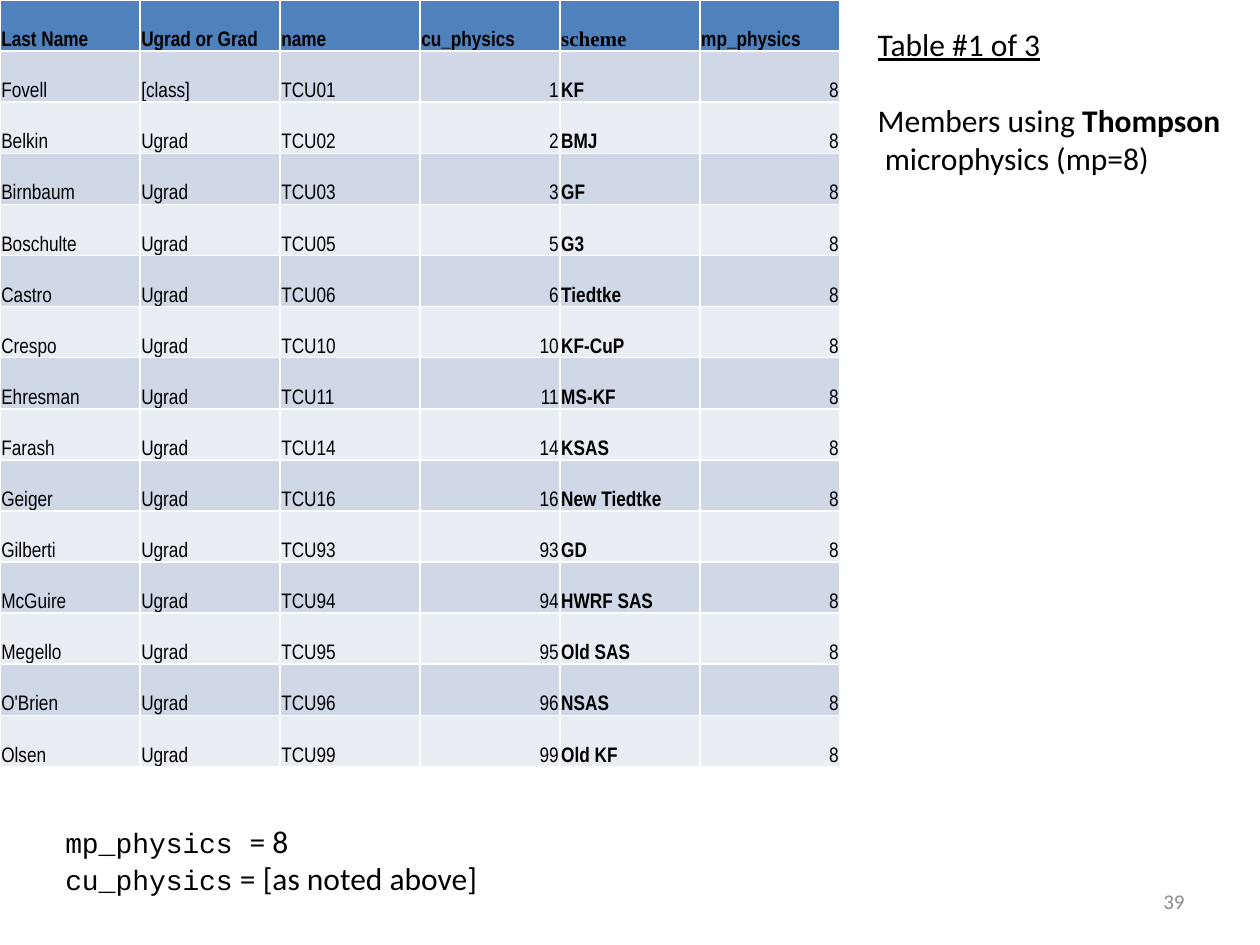
import pptx
import pptx.util
import pptx.dml.color
import pptx.enum.text

Pt = pptx.util.Pt
Align = pptx.enum.text.PP_ALIGN
Anchor = pptx.enum.text.MSO_ANCHOR
Fit = pptx.enum.text.MSO_AUTO_SIZE

hues = {"head": "4F81BD", "odd": "D0D8E8", "even": "E9EDF4",
        "ink": "000000", "page": "8C8C8C"}
heads = ["Last Name", "Ugrad or Grad", "name", "cu_physics", "scheme", "mp_physics"]
members = [
    ("Fovell", 1, "KF"), ("Belkin", 2, "BMJ"), ("Birnbaum", 3, "GF"),
    ("Boschulte", 5, "G3"), ("Castro", 6, "Tiedtke"), ("Crespo", 10, "KF-CuP"),
    ("Ehresman", 11, "MS-KF"), ("Farash", 14, "KSAS"), ("Geiger", 16, "New Tiedtke"),
    ("Gilberti", 93, "GD"), ("McGuire", 94, "HWRF SAS"), ("Megello", 95, "Old SAS"),
    ("O'Brien", 96, "NSAS"), ("Olsen", 99, "Old KF"),
]
rows = [heads]
for name, code, scheme in members:
    level = "[class]" if name == "Fovell" else "Ugrad"
    rows.append([name, level, f"TCU{code:02}", str(code), scheme, "8"])


def style(font, face, size, hue="ink"):
    font.name = face
    font.size = Pt(size)
    font.color.rgb = pptx.dml.color.RGBColor.from_string(hues[hue])


def add_text(left, top, width, height, lines):
    box = slide.shapes.add_textbox(Pt(left), Pt(top), Pt(width), Pt(height))
    frame = box.text_frame
    frame.word_wrap = False
    frame.auto_size = Fit.SHAPE_TO_FIT_TEXT
    for i, line in enumerate(lines):
        para = frame.paragraphs[0] if i == 0 else frame.add_paragraph()
        style(para.font, "Calibri", 18)
        for text in line:
            para.add_run().text = text
    return frame


deck = pptx.Presentation()
deck.slide_width = Pt(720)
deck.slide_height = Pt(540)
slide = deck.slides.add_slide(deck.slide_layouts[6])

page = add_text(516, 500.5, 168, 28.75, [["39"]])
page.word_wrap = True
page.auto_size = Fit.NONE
page.vertical_anchor = Anchor.MIDDLE
page.paragraphs[0].alignment = Align.RIGHT
style(page.paragraphs[0].font, "Calibri", 12, "page")

table = slide.shapes.add_table(
    len(rows), len(heads), Pt(0), Pt(0), Pt(480), Pt(438)).table
for col in table.columns:
    col.width = Pt(80)
for r, row in enumerate(rows):
    table.rows[r].height = Pt(29.2)
    band = "head" if r == 0 else "odd" if r % 2 else "even"
    for c, text in enumerate(row):
        cell = table.cell(r, c)
        cell.text = text
        cell.fill.solid()
        cell.fill.fore_color.rgb = pptx.dml.color.RGBColor.from_string(hues[band])
        cell.vertical_anchor = Anchor.BOTTOM
        cell.margin_left = cell.margin_right = cell.margin_top = Pt(0.75)
        cell.margin_bottom = Pt(0)
        para = cell.text_frame.paragraphs[0]
        face = "Times New Roman" if text == "scheme" else "Arial Narrow"
        style(para.font, face, 12)
        para.font.bold = r == 0 or c == 4
        if r and c in (3, 5):
            para.alignment = Align.RIGHT

side = add_text(494.5, 10.75, 211, 94.5, [
    ["Table #1 of 3"],
    ["Members using ", "Thompson"],
    [" microphysics (mp=8)"],
])
side.paragraphs[0].font.underline = True
side.paragraphs[1].space_before = Pt(22)
side.paragraphs[1].runs[1].font.bold = True

note = add_text(30.25, 466, 252.75, 51, [
    ["mp_physics ", "= 8"],
    ["cu_physics", " = [as noted above]"],
])
for para in note.paragraphs:
    style(para.runs[0].font, "Courier New", 16)

deck.save("out.pptx")
